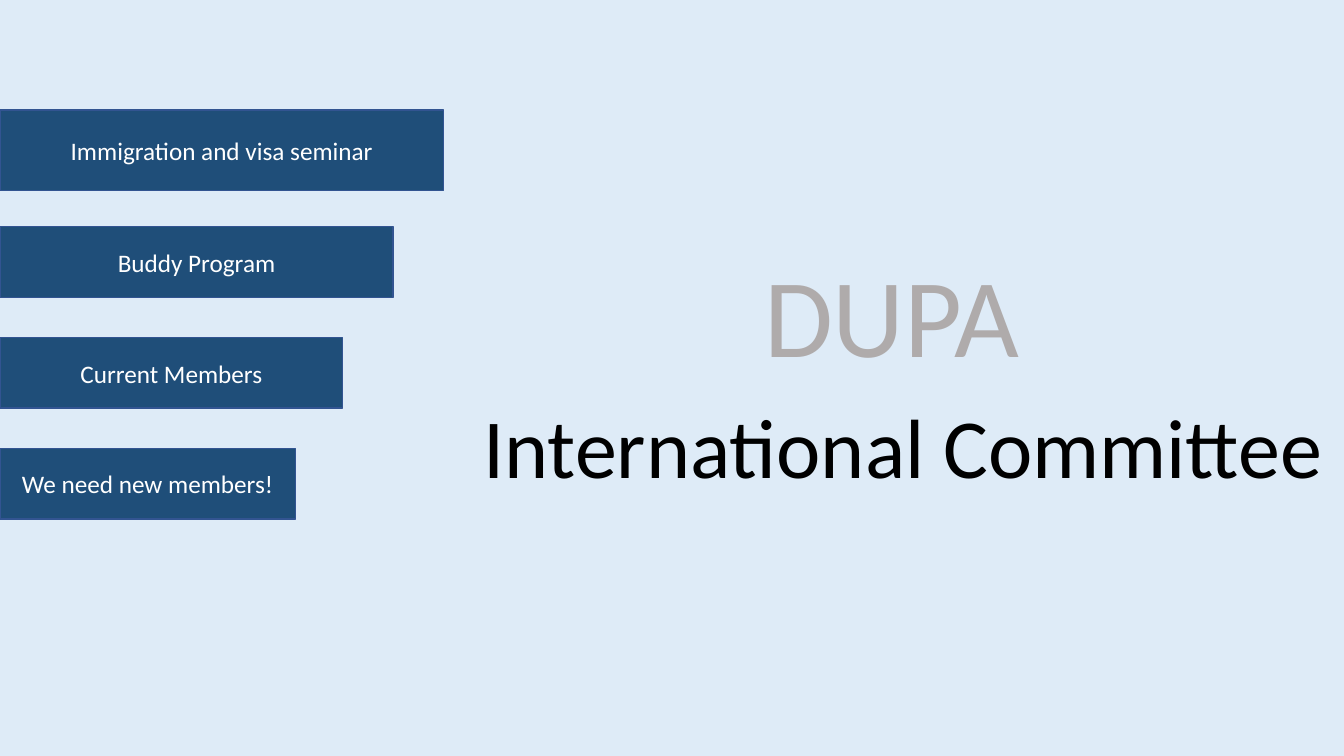
from dataclasses import dataclass

from pptx import Presentation
from pptx import util as u
from pptx.dml.color import RGBColor
from pptx.enum import shapes, text

# Content: wording and place (left, top, width, height) in inches
TITLE = ("DUPA", (6.03, 2.25, 5.63, 1.59))
SUBTITLE = ("International Committee", (4.57, 3.98, 8.77, 1.21))
BARS = [  # label, top, width, height
    ("Immigration and visa seminar", 1.09, 4.4, 0.8),
    ("Buddy Program", 2.25, 3.9, 0.7),
    ("Current Members", 3.35, 3.4, 0.7),
    ("We need new members!", 4.45, 2.93, 0.7),
]


@dataclass(frozen=True)
class Theme:
    font: str = "Calibri"
    background: str = "DEEBF7"
    bar: str = "1F4E79"
    bar_line: str = "325491"
    bar_text: str = "FFFFFF"
    title_text: str = "AFABAB"
    subtitle_text: str = "000000"
    title_size: int = 80
    subtitle_size: int = 60
    bar_size: int = 18


THEME = Theme()


def apply_format(target, values):
    for name, value in values.items():
        setattr(target, name, value)


def place(shape, box):
    names = ("left", "top", "width", "height")
    apply_format(shape, dict(zip(names, map(u.Inches, box))))


def write(shape, wording, size, color, anchor, paragraph_format):
    frame = shape.text_frame
    frame.text = wording
    apply_format(frame, {"word_wrap": True, "vertical_anchor": anchor,
                         "auto_size": text.MSO_AUTO_SIZE.NONE})
    paragraph = frame.paragraphs[0]
    apply_format(paragraph, {"alignment": text.PP_ALIGN.CENTER, **paragraph_format})
    font = paragraph.runs[0].font
    apply_format(font, {"name": THEME.font, "size": u.Pt(size)})
    font.color.rgb = RGBColor.from_string(color)


def add_bar(slide, label, top, width, height):
    bar = slide.shapes.add_shape(
        shapes.MSO_SHAPE.RECTANGLE, *map(u.Inches, (0, top, width, height)))
    bar.shadow.inherit = False
    bar.fill.solid()
    bar.fill.fore_color.rgb = RGBColor.from_string(THEME.bar)
    bar.line.color.rgb = RGBColor.from_string(THEME.bar_line)
    bar.line.width = u.Pt(1)
    write(bar, label, THEME.bar_size, THEME.bar_text, text.MSO_ANCHOR.MIDDLE, {})


def main():
    presentation = Presentation()
    apply_format(presentation, {"slide_width": u.Inches(13.33),
                                "slide_height": u.Inches(7.5)})
    slide = presentation.slides.add_slide(presentation.slide_layouts[0])
    slide.background.fill.solid()
    slide.background.fill.fore_color.rgb = RGBColor.from_string(THEME.background)

    # Title and subtitle
    title, subtitle = slide.shapes.title, slide.placeholders[1]
    place(title, TITLE[1])
    write(title, TITLE[0], THEME.title_size, THEME.title_text,
          text.MSO_ANCHOR.BOTTOM, {"line_spacing": 0.9})
    place(subtitle, SUBTITLE[1])
    write(subtitle, SUBTITLE[0], THEME.subtitle_size, THEME.subtitle_text,
          text.MSO_ANCHOR.TOP, {"line_spacing": 0.9, "space_before": u.Pt(10)})

    # Topic bars along the left edge
    for bar in BARS:
        add_bar(slide, *bar)

    presentation.save("out.pptx")


if __name__ == "__main__":
    main()
